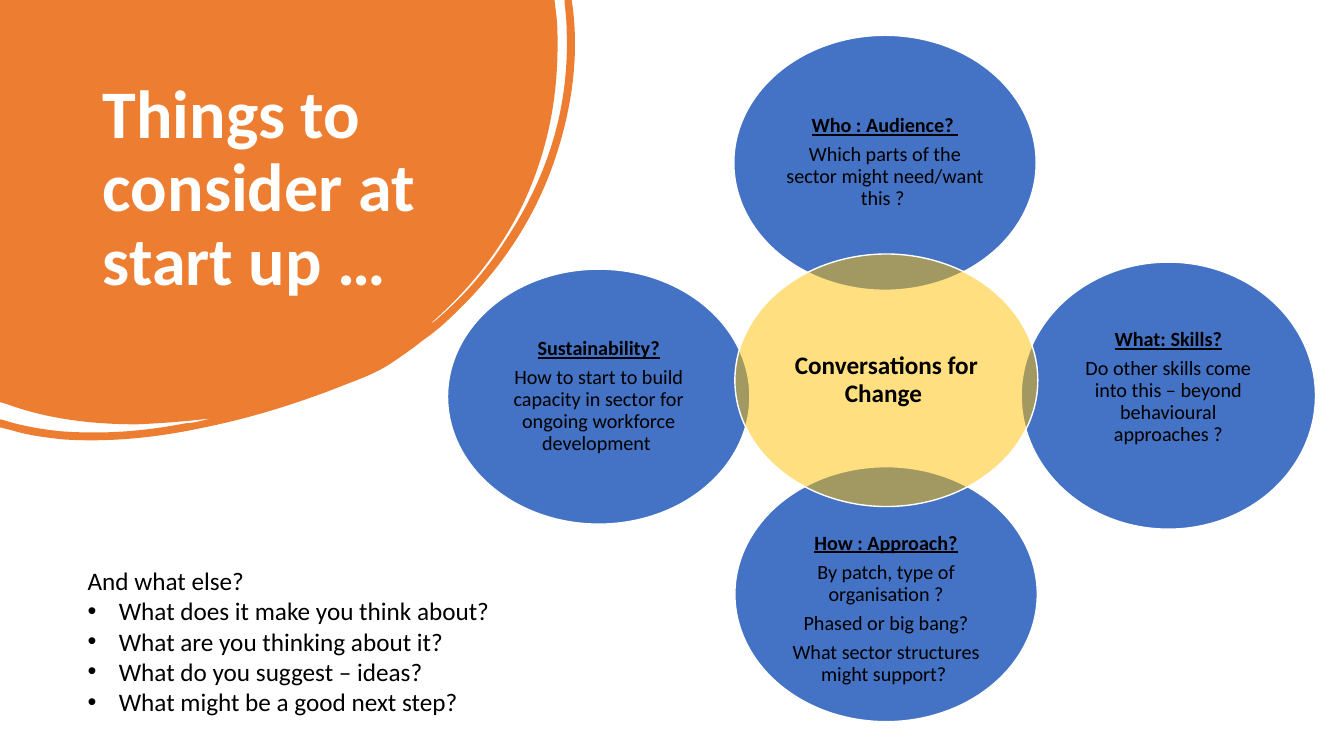
from lxml import etree
from pptx import Presentation
from pptx.dml.color import RGBColor
from pptx.enum.shapes import MSO_SHAPE
from pptx.enum.text import MSO_ANCHOR, MSO_AUTO_SIZE, PP_ALIGN
from pptx.oxml.ns import qn
from pptx.util import Inches, Pt

OVAL = MSO_SHAPE.OVAL
MIDDLE = MSO_ANCHOR.MIDDLE
CENTER, LEFT = PP_ALIGN.CENTER, PP_ALIGN.LEFT
NO_AUTOFIT = MSO_AUTO_SIZE.NONE

ORANGE = RGBColor(0xED, 0x7D, 0x31)
BLUE = RGBColor(0x44, 0x72, 0xC4)
GOLD = RGBColor(0xFF, 0xC0, 0x00)
WHITE = RGBColor(0xFF, 0xFF, 0xFF)
BLACK = RGBColor(0x00, 0x00, 0x00)

TITLE = "Things to consider at start up …"
CIRCLE_SIZE = (22.5, 33.73)

# Each row: left, top, size, (side, top, bottom) text margins, heading, details
CIRCLES = [
    (54.6, 4.67, CIRCLE_SIZE, (0.3, 0.7, 0.8), "Who : Audience? ",
     ["Which parts of the sector might need/want this ? "]),
    (75.98, 34.67, (21.9, 35.33), (0.7, 0.8, 3), "What: Skills?",
     ["Do other skills come into this – beyond behavioural approaches ?"]),
    (54.68, 61.73, CIRCLE_SIZE, (0.3, 4, 0), "How : Approach?",
     ["By patch, type of organisation ?", "Phased or big bang?",
      "What sector structures might support? "]),
    (33.3, 35.6, CIRCLE_SIZE, (0.3, 0.7, 0.8), "Sustainability?",
     ["How to start to build capacity in sector for ongoing workforce development "]),
]
PROMPT = "And what else?"
QUESTIONS = [
    "What does it make you think about?",
    "What are you thinking about it?",
    "What do you suggest – ideas?",
    "What might be a good next step?",
]

# Swoosh in inches: two numbers draw a line, six numbers draw a Bézier curve
SWOOSH_START = (0, 0)
SWOOSH = [
    (5.5, 0), (5.52, 0.17),
    (5.53, 0.26, 5.53, 0.36, 5.53, 0.45),
    (5.53, 1.01, 5.42, 1.54, 5.18, 2.04),
    (4.96, 2.49, 4.65, 2.88, 4.27, 3.21),
    (4.29, 3.21, 4.3, 3.19, 4.32, 3.18),
    (4.59, 2.95, 4.82, 2.69, 5.01, 2.39),
    (5.43, 1.76, 5.65, 1.07, 5.62, 0.3),
    (5.62, 0.21, 5.61, 0.12, 5.6, 0.03),
    (5.6, 0), (5.67, 0), (5.68, 0.07),
    (5.74, 0.54, 5.68, 1.02, 5.53, 1.5),
    (5.33, 2.14, 4.97, 2.68, 4.48, 3.14),
    (4.39, 3.23, 4.29, 3.31, 4.19, 3.38),
    (4.09, 3.46, 3.99, 3.53, 3.87, 3.61),
    (3.75, 3.69, 3.6, 3.75, 3.44, 3.81),
    (2.99, 3.99, 2.52, 4.14, 2.03, 4.24),
    (1.57, 4.34, 1.1, 4.39, 0.63, 4.36),
    (0.45, 4.34, 0.28, 4.32, 0.12, 4.27),
    (0, 4.24), (0, 4.16), (0.04, 4.17),
    (0.23, 4.23, 0.42, 4.26, 0.61, 4.28),
    (1.03, 4.31, 1.43, 4.28, 1.84, 4.2),
    (1.89, 4.2, 1.93, 4.19, 1.98, 4.18),
    (2.02, 4.17, 2.06, 4.16, 2.1, 4.15),
    (1.86, 4.18, 1.61, 4.2, 1.36, 4.21),
    (0.92, 4.21, 0.48, 4.16, 0.07, 4.01),
    (0, 3.99),
]


class SlideBuilder:
    """Draws on one page; places and sizes are percentages of the slide."""

    font = "Calibri"

    def __init__(self, deck):
        self.width, self.height = deck.slide_width, deck.slide_height
        self.page = deck.slides.add_slide(deck.slide_layouts[5])

    def across(self, share):
        return round(self.width * share / 100)

    def down(self, share):
        return round(self.height * share / 100)

    def place(self, left, top, width, height):
        return self.across(left), self.down(top), self.across(width), self.down(height)

    def style(self, para, size, color=BLACK, bold=False, underline=False, align=LEFT):
        para.alignment = align
        for span in para.runs:
            span.font.name = self.font
            span.font.size = Pt(size)
            span.font.bold = bold
            span.font.underline = underline
            span.font.color.rgb = color

    def title(self, text, *place):
        box = self.page.shapes.title
        box.left, box.top, box.width, box.height = self.place(*place)
        frame = box.text_frame
        frame.text = text
        frame.word_wrap = True
        frame.auto_size = NO_AUTOFIT
        frame.vertical_anchor = MIDDLE
        frame.margin_top, frame.margin_bottom = self.down(1.1), self.down(0.3)
        para = frame.paragraphs[0]
        para.line_spacing = 0.9
        self.style(para, 48.6, WHITE, bold=True)

    def swoosh(self, start, segments):
        """Draw the curved corner shape behind the title."""
        builder = self.page.shapes.build_freeform(*map(Inches, start))
        builder.add_line_segments([tuple(map(Inches, segment[-2:])) for segment in segments])
        shape = builder.convert_to_shape()
        lines = list(shape.element.iter(qn("a:lnTo")))
        for line, segment in zip(lines, segments):
            if len(segment) == 6:
                self.bend(line, segment[:4])
        shape.shadow.inherit = False
        shape.fill.solid()
        shape.fill.fore_color.rgb = ORANGE
        shape.line.fill.background()
        self.page.shapes.title.element.addprevious(shape.element)

    def bend(self, line, controls):
        """Turn a line of a freeform path into a cubic curve."""
        curve = etree.Element(qn("a:cubicBezTo"))
        for x, y in (controls[:2], controls[2:]):
            etree.SubElement(curve, qn("a:pt"), x=str(Inches(x)), y=str(Inches(y)))
        curve.append(line[0])
        line.getparent().replace(line, curve)

    def circle(self, place, color, lines, margins=(0.3, 0.8, 0.8), size=14.4,
               underline=True, opacity=100):
        """Draw an oval whose first line is a bold heading."""
        oval = self.page.shapes.add_shape(OVAL, *self.place(*place))
        oval.shadow.inherit = False
        oval.fill.solid()
        oval.fill.fore_color.rgb = color
        if opacity < 100:
            tint = oval.element.spPr.find(qn("a:solidFill"))[0]
            etree.SubElement(tint, qn("a:alpha"), val=str(opacity * 1000))
        oval.line.color.rgb = WHITE
        oval.line.width = Pt(1)
        frame = oval.text_frame
        frame.word_wrap = True
        frame.vertical_anchor = MIDDLE
        side, top, bottom = margins
        frame.margin_left = frame.margin_right = self.across(side)
        frame.margin_top, frame.margin_bottom = self.down(top), self.down(bottom)
        frame.text = "\n".join(lines)
        for index, para in enumerate(frame.paragraphs):
            heading = index == 0
            para.line_spacing = 0.9
            para.space_after = Pt(5.3)
            self.style(para, size, bold=heading, underline=heading and underline, align=CENTER)

    def questions(self, prompt, items, *place):
        box = self.page.shapes.add_textbox(*self.place(*place))
        frame = box.text_frame
        frame.word_wrap = True
        frame.text = "\n".join([prompt, *items])
        for index, para in enumerate(frame.paragraphs):
            para.level = 1
            self.style(para, 18)
            hanging = Inches(0.31) if index else 0
            properties = para._p.get_or_add_pPr()
            properties.set("marL", str(Inches(0.5) + hanging))
            properties.set("indent", str(-hanging))
            if index:
                etree.SubElement(properties, qn("a:buFont"), typeface="Arial")
                etree.SubElement(properties, qn("a:buChar"), char="•")


def main():
    deck = Presentation()
    deck.slide_width, deck.slide_height = Inches(13.33), Inches(7.5)
    slide = SlideBuilder(deck)
    slide.title(TITLE, 6.9, 9.87, 26.4, 29.6)
    slide.swoosh(SWOOSH_START, SWOOSH)
    for left, top, size, margins, heading, details in CIRCLES:
        slide.circle((left, top, *size), BLUE, [heading, *details], margins)
    slide.circle((54.68, 33.6, 22.54, 33.4), GOLD, ["Conversations for Change "],
                 size=18, underline=False, opacity=50)
    slide.questions(PROMPT, QUESTIONS, 2.03, 74.13, 50.03, 21.6)
    deck.save("out.pptx")


if __name__ == "__main__":
    main()
